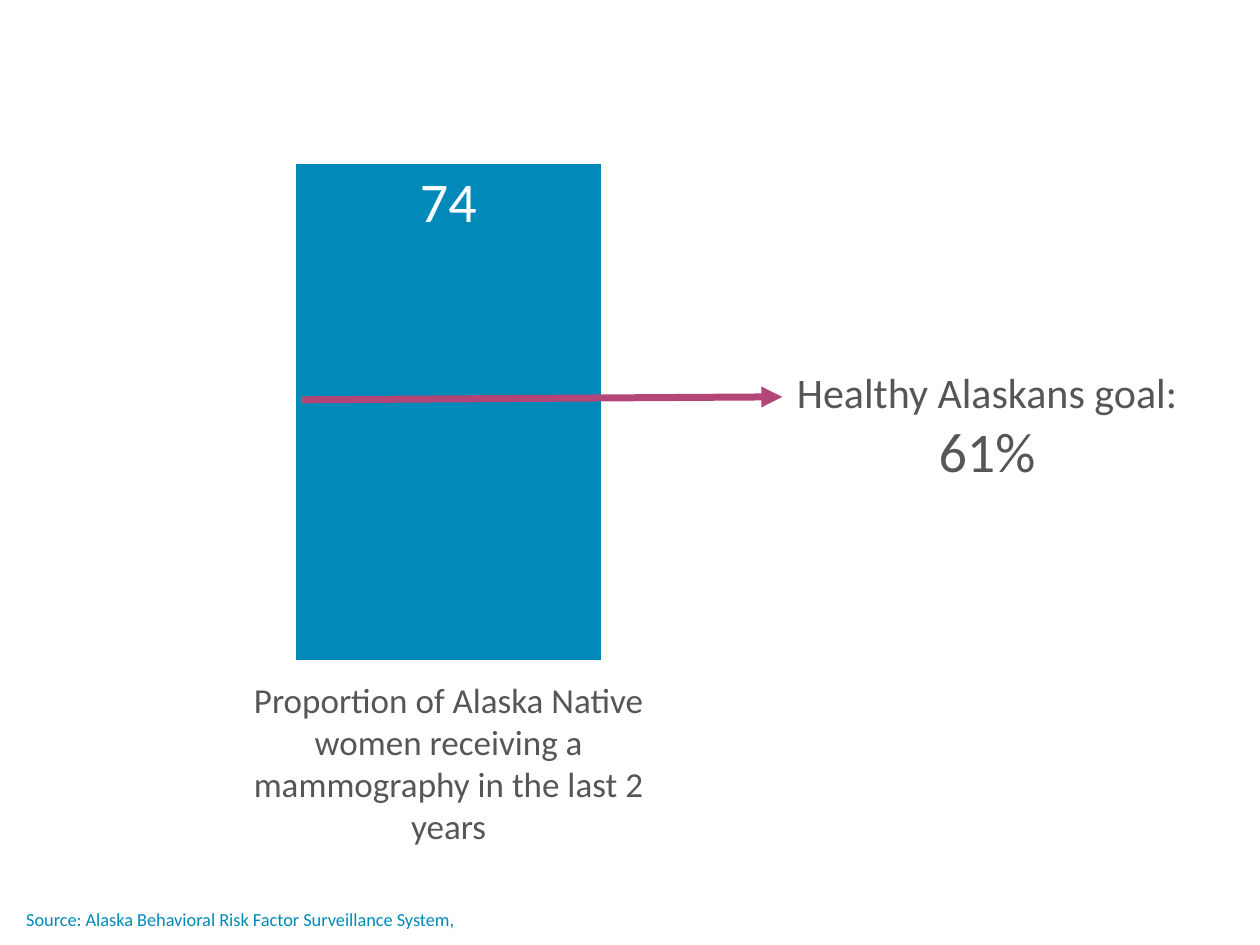
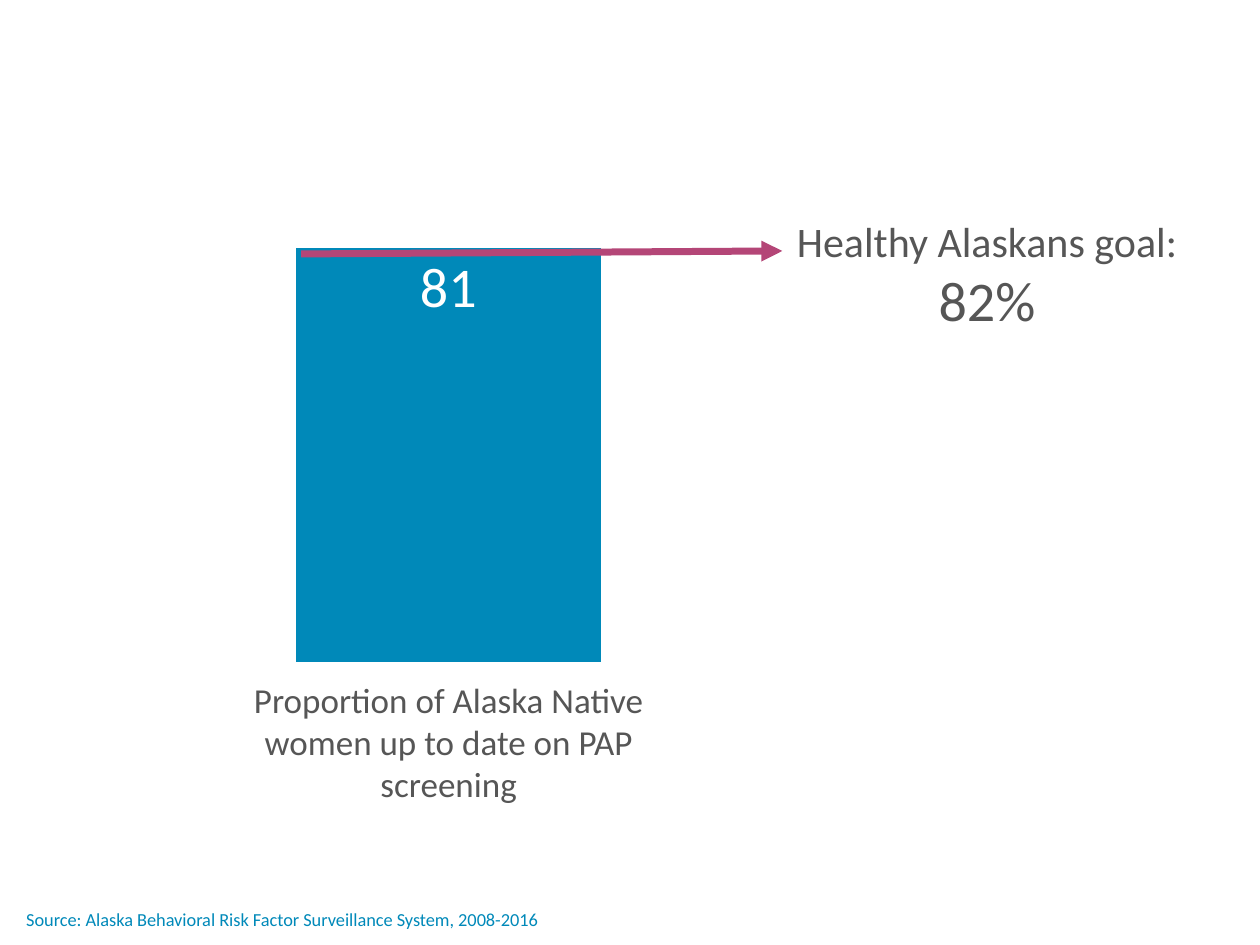
"""Build two slides that set a screening rate against its goal."""
import dataclasses

import lxml.etree
import pptx
import pptx.chart.data
import pptx.dml.color
import pptx.enum.chart
import pptx.enum.shapes
import pptx.enum.text
import pptx.oxml.ns
import pptx.slide
import pptx.util

Cm = pptx.util.Cm
Pt = pptx.util.Pt
RGBColor = pptx.dml.color.RGBColor

BLUE = RGBColor(0x00, 0x89, 0xB9)
ROSE = RGBColor(0xB4, 0x46, 0x77)
GREY = RGBColor(0x56, 0x56, 0x56)
WHITE = RGBColor(0xFF, 0xFF, 0xFF)
FONT = "Calibri"
FLOOR = 13.54
EDGE = 15.77
SOURCE = "Source: Alaska Behavioral Risk Factor Surveillance System,"


@dataclasses.dataclass(frozen=True)
class Rate:
    value: int
    limit: int
    goal: str
    label: str
    source: str
    chart_top: float
    line_top: float
    goal_top: float
    label_tall: float


@dataclasses.dataclass(frozen=True)
class Box:
    left: float
    top: float
    width: float
    height: float


@dataclasses.dataclass(frozen=True)
class Line:
    text: str
    size: float
    color: RGBColor = GREY


RATES = [
    Rate(74, 80, "61%",
         "Proportion of Alaska Native women receiving a mammography in the last 2 years",
         SOURCE, 2.26, 8, 7.26, 3.68),
    Rate(81, 90, "82%",
         "Proportion of Alaska Native women up to date on PAP screening",
         f"{SOURCE} 2008-2016", 3.89, 5.06, 4.22, 2.82),
]


def style(font: pptx.text.text.Font, size: float, color: RGBColor) -> None:
    font.name = FONT
    font.size = Pt(size)
    font.color.rgb = color


def add_text(slide: pptx.slide.Slide, box: Box, lines: list[Line],
             align: pptx.enum.text.PP_ALIGN = pptx.enum.text.PP_ALIGN.CENTER) -> None:
    shape = slide.shapes.add_textbox(
        Cm(box.left), Cm(box.top), Cm(box.width), Cm(box.height))
    frame = shape.text_frame
    frame.word_wrap = True
    frame.auto_size = pptx.enum.text.MSO_AUTO_SIZE.SHAPE_TO_FIT_TEXT
    frame.text = "\n".join(line.text for line in lines)
    for par, line in zip(frame.paragraphs, lines):
        par.alignment = align
        for run in par.runs:
            style(run.font, line.size, line.color)


def add_bar(slide: pptx.slide.Slide, rate: Rate) -> None:
    data = pptx.chart.data.CategoryChartData()
    data.categories = ["1"]
    data.add_series("Series 1", [rate.value])
    chart = slide.shapes.add_chart(
        pptx.enum.chart.XL_CHART_TYPE.COLUMN_CLUSTERED,
        Cm(3.81), Cm(rate.chart_top), Cm(10.46), Cm(FLOOR - rate.chart_top), data).chart
    style(chart.font, 10, GREY)
    chart.has_legend = False
    chart.has_title = False
    for axis in (chart.category_axis, chart.value_axis):
        axis.visible = False
        axis.has_major_gridlines = False
    chart.value_axis.minimum_scale = 0
    chart.value_axis.maximum_scale = rate.limit
    plot = chart.plots[0]
    plot.gap_width = 63
    plot.overlap = -27
    plot.vary_by_categories = False
    fill = plot.series[0].format.fill
    fill.solid()
    fill.fore_color.rgb = BLUE
    plot.has_data_labels = True
    labels = plot.data_labels
    labels.show_value = True
    labels.position = pptx.enum.chart.XL_LABEL_POSITION.INSIDE_END
    style(labels.font, 32, WHITE)


def add_arrow(slide: pptx.slide.Slide, top: float) -> None:
    arrow = slide.shapes.add_connector(
        pptx.enum.shapes.MSO_CONNECTOR.STRAIGHT,
        Cm(6.07), Cm(top + 0.06), Cm(EDGE), Cm(top))
    arrow.line.color.rgb = ROSE
    arrow.line.width = Pt(4)
    name = pptx.oxml.ns.qn
    lxml.etree.SubElement(arrow.line._get_or_add_ln(), name("a:tailEnd"), type="triangle")
    lxml.etree.SubElement(arrow._element.spPr, name("a:effectLst"))


def add_rate(deck: pptx.presentation.Presentation, rate: Rate) -> None:
    slide = deck.slides.add_slide(deck.slide_layouts[6])
    add_bar(slide, rate)
    add_text(slide, Box(4.22, 13.56, 9.65, rate.label_tall), [Line(rate.label, 20)])
    add_text(slide, Box(0.28, 18.19, 18.42, 0.74), [Line(rate.source, 10.5, BLUE)],
             pptx.enum.text.PP_ALIGN.LEFT)
    add_arrow(slide, rate.line_top)
    add_text(slide, Box(EDGE, rate.goal_top, 8.26, 2.64),
             [Line("Healthy Alaskans goal:", 24), Line(rate.goal, 32)])


def main() -> None:
    deck = pptx.Presentation()
    deck.slide_width = Cm(25.4)
    deck.slide_height = Cm(19.05)
    for rate in RATES:
        add_rate(deck, rate)
    deck.save("out.pptx")


if __name__ == "__main__":
    main()
